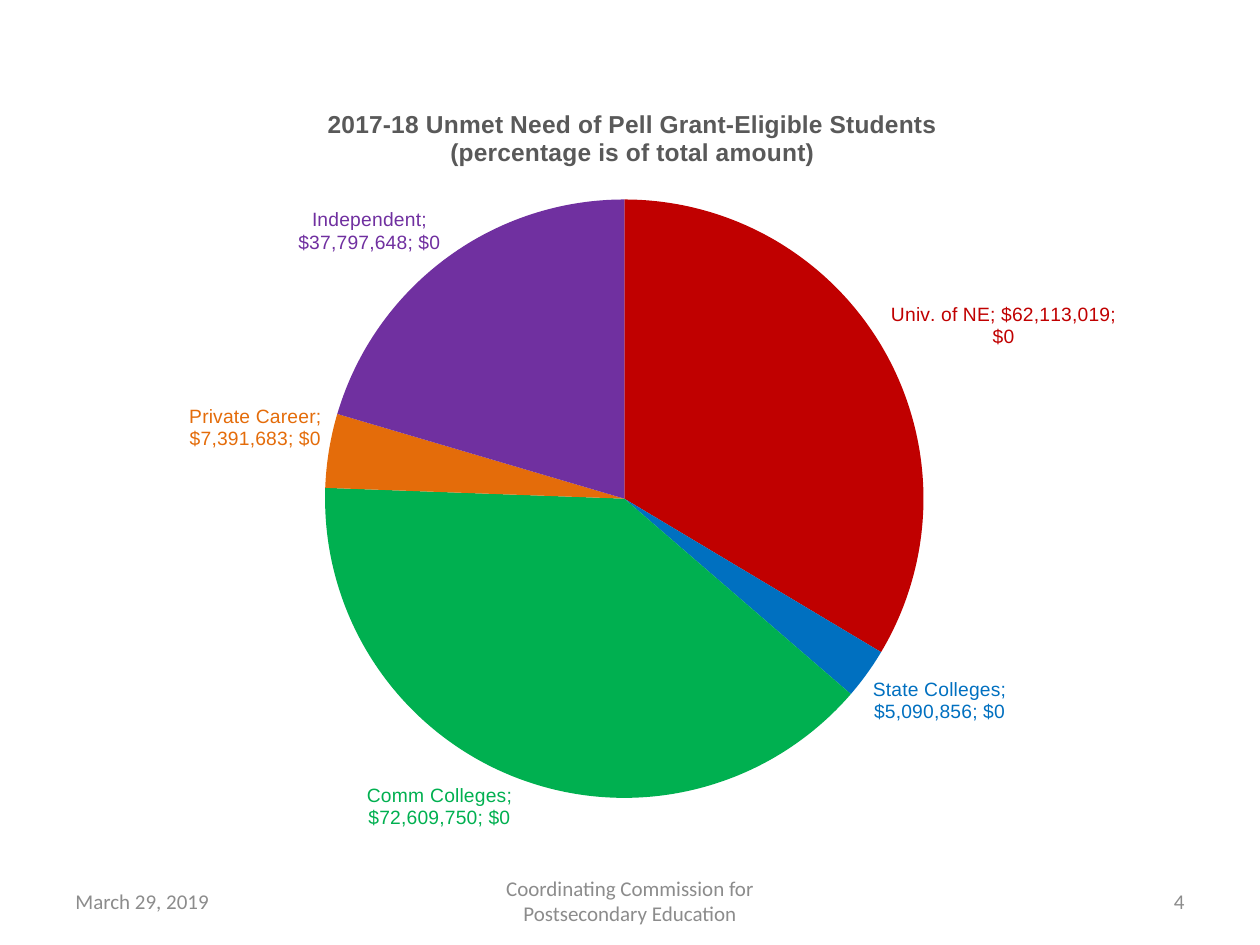
from lxml.etree import SubElement
from pptx import Presentation
from pptx.chart.data import CategoryChartData
from pptx.dml.color import RGBColor
from pptx.enum.chart import XL_CHART_TYPE, XL_LABEL_POSITION
from pptx.enum.text import MSO_ANCHOR, PP_ALIGN
from pptx.oxml import parse_xml
from pptx.oxml.ns import nsdecls, qn
from pptx.util import Pt

COLORS = {
    "footer": "8C8C8C",
    "title": "595959",
    "Univ. of NE": "C00000",
    "State Colleges": "0070C0",
    "Comm Colleges": "00B050",
    "Private Career": "E46C0A",
    "Independent": "7030A0",
}
UNMET_NEED = {
    "Univ. of NE": 62113019,
    "State Colleges": 5090856,
    "Comm Colleges": 72609750,
    "Private Career": 7391683,
    "Independent": 37797648,
}
DOLLARS = '"$"#,##0'


class SlideBuilder:
    footer_font, chart_font = "Calibri", "Arial"
    footer_size, title_size, label_size = 12, 14, 11

    def __init__(self, slide):
        self.slide = slide

    def style(self, font, name, size, color, bold=False):
        font.name, font.size, font.bold = name, Pt(size), bold
        font.color.rgb = RGBColor.from_string(COLORS[color])

    def footer(self, text, left, width, align):
        box = self.slide.shapes.add_textbox(Pt(left), Pt(500.5), Pt(width), Pt(28.75))
        frame = box.text_frame
        frame.word_wrap = True
        frame.vertical_anchor = MSO_ANCHOR.MIDDLE
        frame.paragraphs[0].alignment = align
        run = frame.paragraphs[0].add_run()
        run.text = text
        self.style(run.font, self.footer_font, self.footer_size, "footer")

    def place(self, parent, index, **fractions):
        """Set a manual layout, in fractions of the chart area."""
        for old in parent.findall(qn("c:layout")):
            parent.remove(old)
        layout = parse_xml(f"<c:layout {nsdecls('c')}><c:manualLayout/></c:layout>")
        for tag, value in fractions.items():
            SubElement(layout[0], qn(f"c:{tag}"), val=str(value))
        parent.insert(index, layout)

    def pie(self, amounts, title_lines, left, top, width, height):
        chart_data = CategoryChartData(number_format=DOLLARS)
        chart_data.categories = list(amounts)
        chart_data.add_series("Series 1", list(amounts.values()))
        chart = self.slide.shapes.add_chart(
            XL_CHART_TYPE.PIE, Pt(left), Pt(top), Pt(width), Pt(height), chart_data
        ).chart
        chart.has_legend = False
        chart.font.name, chart.font.size = self.chart_font, Pt(self.label_size)

        # Title
        chart.has_title = True
        frame = chart.chart_title.text_frame
        for number, line in enumerate(title_lines):
            paragraph = frame.add_paragraph() if number else frame.paragraphs[0]
            run = paragraph.add_run()
            run.text = line
            self.style(run.font, self.chart_font, self.title_size, "title", bold=True)
        self.place(chart.chart_title._element, 1, xMode="edge", yMode="edge", x=0.23, y=0.04)

        # Slices, each with a label in its own colour
        plot = chart.plots[0]
        plot.vary_by_categories = True
        for number, sector in enumerate(amounts):
            point = plot.series[0].points[number]
            point.format.fill.solid()
            point.format.fill.fore_color.rgb = RGBColor.from_string(COLORS[sector])
            point.format.line.fill.background()
            self.style(point.data_label.font, self.chart_font, self.label_size, sector)
            point.data_label.position = XL_LABEL_POSITION.OUTSIDE_END
        for label in plot.series[0]._element.iter(qn("c:dLbl")):
            label.insert(1, parse_xml(
                f"<c:numFmt {nsdecls('c')} formatCode='{DOLLARS}' sourceLinked='0'/>"))
            for tag in ("c:showCatName", "c:showVal", "c:showPercent"):
                label.find(qn(tag)).set("val", "1")
            SubElement(label, qn("c:separator")).text = "; "

        plot_area = chart._chartSpace.find(f"{qn('c:chart')}/{qn('c:plotArea')}")
        self.place(plot_area, 0, layoutTarget="inner", xMode="edge", yMode="edge",
                   x=0.23, y=0.16, w=0.53, h=0.76)


def main():
    deck = Presentation()
    deck.slide_width, deck.slide_height = Pt(720), Pt(540)
    builder = SlideBuilder(deck.slides.add_slide(deck.slide_layouts[6]))

    # Footer row
    builder.footer("March 29, 2019", 36, 168, PP_ALIGN.LEFT)
    builder.footer("4", 516, 168, PP_ALIGN.RIGHT)
    builder.footer("Coordinating Commission for Postsecondary Education",
                   246, 228, PP_ALIGN.CENTER)

    # Unmet need by sector
    builder.pie(UNMET_NEED, ["2017-18 Unmet Need of Pell Grant-Eligible Students",
                             "(percentage is of total amount)"], 36, 42, 648, 450)
    deck.save("out.pptx")


if __name__ == "__main__":
    main()
